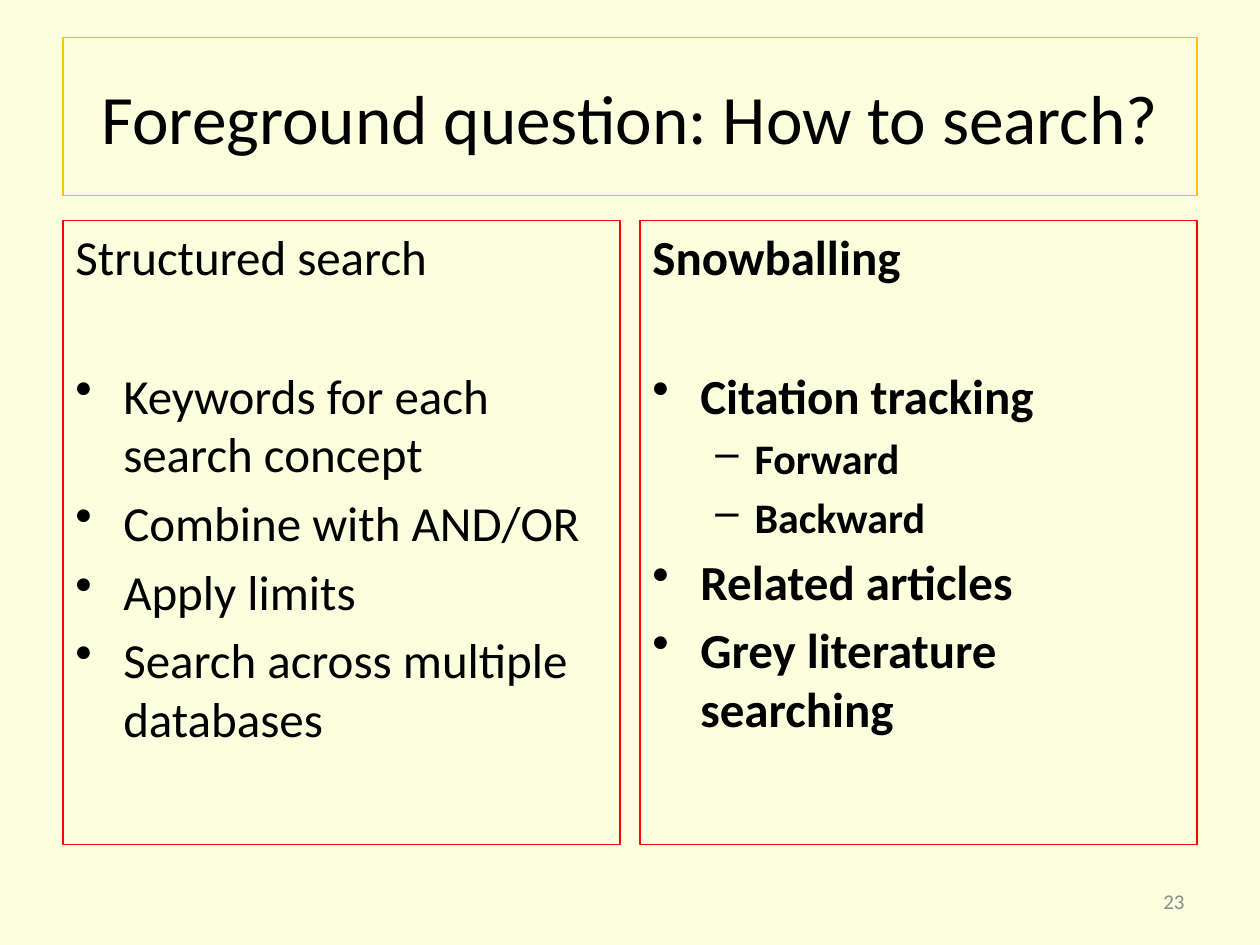
"""Build a slide comparing structured search with snowballing."""
import pptx
import pptx.dml.color
import pptx.enum.text
import pptx.util
from lxml import etree
from pptx.oxml.ns import qn

COLORS = {"background": "FBFFDD", "title_line": "FFC000", "panel_line": "FF0000",
          "text": "000000", "number": "8C8C8C"}
FONT = "Calibri"
MARGIN, GUTTER, CONTENT_WIDTH = 0.5, 0.16, 9
PANEL_WIDTH = (CONTENT_WIDTH - GUTTER) / 2
HEADING_GAP = 45.4
LEVELS = [
    {"size": 28, "bullet": "•", "indent": 0.38, "hanging": 0.38},
    {"size": 24, "bullet": "–", "indent": 0.81, "hanging": 0.31},
]
PANELS = [
    ("Structured search", False,
     [("Keywords for each search concept", 0), ("Combine with AND/OR", 0),
      ("Apply limits", 0), ("Search across multiple databases", 0)]),
    ("Snowballing", True,
     [("Citation tracking", 0), ("Forward", 1), ("Backward", 1),
      ("Related articles", 0), ("Grey literature searching", 0)]),
]


def color(name):
    """Return a named colour."""
    return pptx.dml.color.RGBColor.from_string(COLORS[name])


def place(shape, left, top, width, height):
    """Set the position and size of a shape in inches."""
    shape.left, shape.top, shape.width, shape.height = (
        pptx.util.Inches(length) for length in (left, top, width, height))


def outline(shape, name):
    """Give a shape a thin coloured line."""
    shape.line.color.rgb = color(name)
    shape.line.width = pptx.util.Pt(0.75)


def format_font(paragraph, size, name="text", bold=False):
    """Set the font of a whole paragraph."""
    font = paragraph.font
    font.name, font.size, font.bold = FONT, pptx.util.Pt(size), bold
    font.color.rgb = color(name)


def add_bullet(paragraph, style):
    """Add a bullet with a hanging indent."""
    properties = paragraph._p.get_or_add_pPr()
    properties.set("marL", str(pptx.util.Inches(style["indent"])))
    properties.set("indent", str(-pptx.util.Inches(style["hanging"])))
    bullet = etree.Element(qn("a:buChar"), char=style["bullet"])
    properties.find(qn("a:defRPr")).addprevious(bullet)


def add_text_box(slide, *box):
    """Add a wrapping text box and return it."""
    shape = slide.shapes.add_textbox(0, 0, 0, 0)
    place(shape, *box)
    shape.text_frame.word_wrap = True
    return shape


def format_title(slide, text):
    """Fill and frame the title placeholder."""
    title = slide.shapes.title
    place(title, MARGIN, 0.3, CONTENT_WIDTH, 1.25)
    outline(title, "title_line")
    frame = title.text_frame
    frame.text = text
    frame.auto_size = pptx.enum.text.MSO_AUTO_SIZE.NONE
    frame.vertical_anchor = pptx.enum.text.MSO_ANCHOR.MIDDLE
    paragraph = frame.paragraphs[0]
    paragraph.alignment = pptx.enum.text.PP_ALIGN.CENTER
    format_font(paragraph, 39.6)


def add_panel(slide, column, heading, bold, items):
    """Add a framed column with a heading and a bulleted list."""
    left = MARGIN + column * (PANEL_WIDTH + GUTTER)
    panel = add_text_box(slide, left, 1.75, PANEL_WIDTH, 4.95)
    outline(panel, "panel_line")
    frame = panel.text_frame
    title = frame.paragraphs[0]
    title.text = heading
    title.space_before = pptx.util.Pt(LEVELS[0]["size"] * 0.2)
    format_font(title, LEVELS[0]["size"], bold=bold)
    for position, (text, level) in enumerate(items):
        style = LEVELS[level]
        paragraph = frame.add_paragraph()
        paragraph.text, paragraph.level = text, level
        gap = style["size"] * 0.2 if position else HEADING_GAP
        paragraph.space_before = pptx.util.Pt(gap)
        format_font(paragraph, style["size"], bold=bold)
        add_bullet(paragraph, style)


def add_slide_number(slide, number):
    """Add the slide number at the bottom right."""
    frame = add_text_box(slide, 7.17, 6.95, 2.33, 0.4).text_frame
    frame.vertical_anchor = pptx.enum.text.MSO_ANCHOR.MIDDLE
    paragraph = frame.paragraphs[0]
    paragraph.text = number
    paragraph.alignment = pptx.enum.text.PP_ALIGN.RIGHT
    format_font(paragraph, 12, "number")


def main():
    """Build and save the presentation."""
    presentation = pptx.Presentation()
    presentation.slide_width = pptx.util.Inches(10)
    presentation.slide_height = pptx.util.Inches(7.5)
    slide = presentation.slides.add_slide(presentation.slide_layouts[5])
    slide.background.fill.solid()
    slide.background.fill.fore_color.rgb = color("background")
    format_title(slide, "Foreground question: How to search?")
    for column, panel in enumerate(PANELS):
        add_panel(slide, column, *panel)
    add_slide_number(slide, "23")
    presentation.save("out.pptx")


if __name__ == "__main__":
    main()
